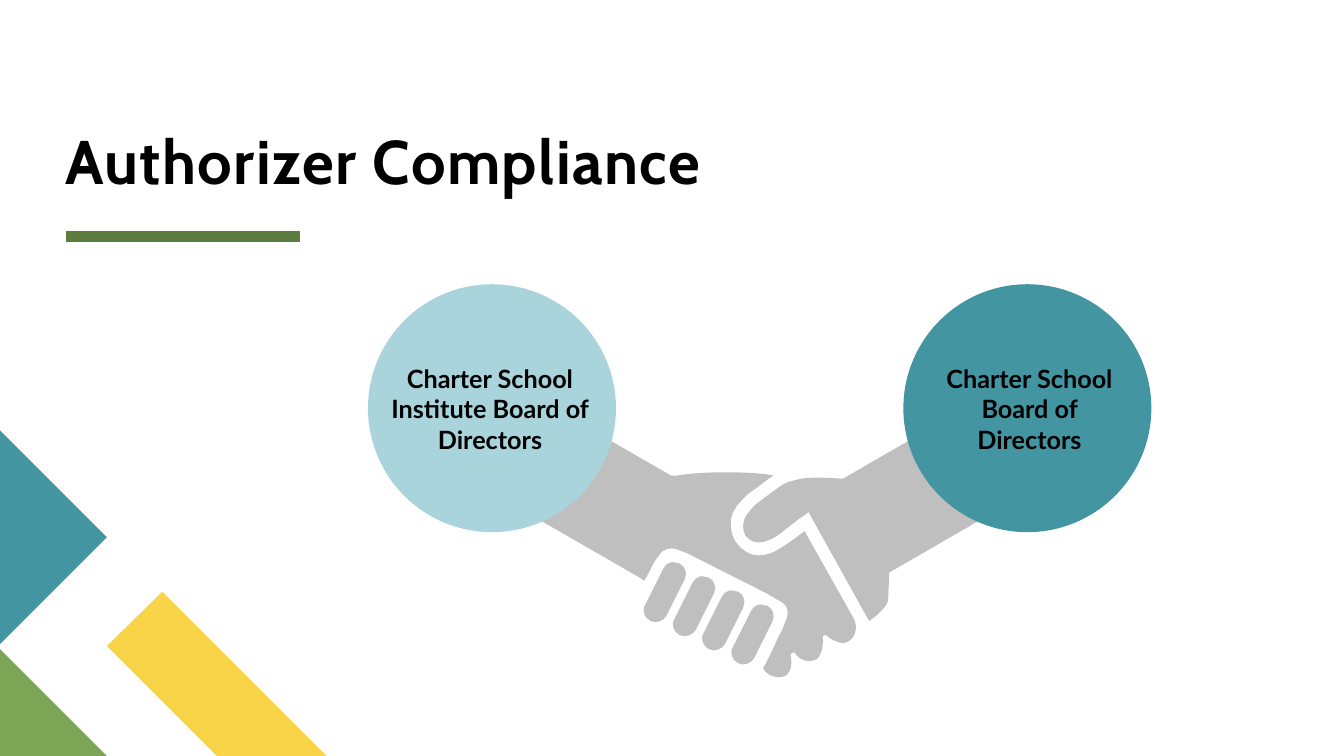
from pptx import Presentation
from pptx.dml.color import RGBColor
from pptx.enum.shapes import MSO_CONNECTOR as CONN, MSO_SHAPE as SHAPE
from pptx.enum.text import MSO_ANCHOR as ANCHOR, MSO_AUTO_SIZE as AUTO, PP_ALIGN as ALIGN
from pptx.oxml.ns import qn
from pptx.util import Inches, Pt
from lxml import etree

TEAL, PALE, GREEN, YELLOW = "4495A2", "A9D4DB", "7CA655", "F9D448"
RULE, GREY, BLACK = "5D7D40", "BFBFBF", "000000"

# Outlines in inches: pairs are corners, six numbers are a Bézier curve
LEFT_HAND = [
    (4, 4.38), (6.31, 5.71), (6.39, 5.76),
    (6.42, 5.71, 6.45, 5.66, 6.47, 5.61), (6.5, 5.56, 6.53, 5.51, 6.57, 5.47),
    (6.6, 5.45, 6.63, 5.44, 6.66, 5.44), (6.69, 5.44, 6.72, 5.45, 6.74, 5.46),
    (6.77, 5.47, 6.79, 5.48, 6.82, 5.49), (7.61, 5.89),
    (7.64, 5.91, 7.68, 5.93, 7.71, 5.95), (7.76, 5.97, 7.8, 6, 7.81, 6.05),
    (7.82, 6.1, 7.8, 6.15, 7.78, 6.19), (7.77, 6.23, 7.75, 6.27, 7.73, 6.3),
    (7.68, 6.41, 7.63, 6.52, 7.57, 6.63), (7.61, 6.71, 7.72, 6.74, 7.8, 6.7),
    (7.85, 6.66, 7.86, 6.57, 7.84, 6.49), (7.88, 6.47),
    (7.92, 6.55, 8.02, 6.58, 8.1, 6.54), (8.15, 6.5, 8.17, 6.4, 8.16, 6.31),
    (8.19, 6.3), (8.25, 6.35, 8.35, 6.4, 8.4, 6.37),
    (8.49, 6.33, 8.51, 6.22, 8.47, 6.14), (7.98, 5.27),
    (7.9, 5.33, 7.81, 5.4, 7.72, 5.45), (7.68, 5.48, 7.6, 5.51, 7.53, 5.51),
    (7.47, 5.51, 7.42, 5.49, 7.38, 5.46), (7.29, 5.4, 7.24, 5.29, 7.25, 5.18),
    (7.25, 5.12, 7.27, 5.08, 7.29, 5.05), (7.31, 5.01, 7.34, 4.98, 7.37, 4.95),
    (7.41, 4.9, 7.46, 4.87, 7.52, 4.83), (7.57, 4.79, 7.62, 4.75, 7.67, 4.72),
    (7.61, 4.69, 7.05, 4.66, 6.7, 4.72), (6.68, 4.72, 6.67, 4.72, 6.66, 4.72),
    (6.07, 4.38)]
RIGHT_HAND = [
    (9, 4.38), (8.36, 4.75),
    (8.22, 4.74, 8.06, 4.73, 7.94, 4.75), (7.9, 4.76, 7.86, 4.77, 7.82, 4.78),
    (7.77, 4.8, 7.73, 4.83, 7.69, 4.86), (7.62, 4.91, 7.55, 4.96, 7.49, 5.01),
    (7.46, 5.04, 7.44, 5.06, 7.42, 5.09), (7.4, 5.11, 7.39, 5.14, 7.38, 5.16),
    (7.36, 5.23, 7.37, 5.31, 7.43, 5.35), (7.48, 5.39, 7.55, 5.39, 7.62, 5.36),
    (7.71, 5.33, 7.79, 5.25, 7.87, 5.19), (7.92, 5.15, 7.97, 5.12, 8.02, 5.08),
    (8.62, 6.16), (8.67, 6.13, 8.81, 6.02, 8.81, 5.94),
    (8.81, 5.86, 8.82, 5.77, 8.82, 5.68), (11.07, 4.38)]
FINGER = [
    (6.69, 5.58), (6.68, 5.57, 6.66, 5.58, 6.65, 5.58),
    (6.62, 5.59, 6.59, 5.61, 6.58, 5.64), (6.4, 6),
    (6.38, 6.03, 6.38, 6.06, 6.39, 6.09), (6.4, 6.12, 6.42, 6.14, 6.45, 6.16),
    (6.51, 6.19, 6.58, 6.16, 6.61, 6.11), (6.79, 5.75),
    (6.82, 5.69, 6.8, 5.62, 6.74, 5.59), (6.72, 5.58, 6.71, 5.58, 6.69, 5.58)]


def rgb(code):
    return RGBColor.from_string(code)


def shift(outline, dx, dy):
    return [tuple(v + (dy if i % 2 else dx) for i, v in enumerate(seg)) for seg in outline]


class Deck:
    title_font, body_font = "Cabin", "Lato"

    def __init__(self):
        self.prs = Presentation()
        self.prs.slide_width, self.prs.slide_height = Inches(13.33), Inches(7.5)
        self.s = self.prs.slides.add_slide(self.prs.slide_layouts[5])

    def style(self, p, font, size, align):
        p.alignment = align
        p.font.name, p.font.size, p.font.bold = font, Pt(size), True
        p.font.color.rgb = rgb(BLACK)

    def paint(self, sp, color):
        sp.shadow.inherit = False
        sp.fill.solid()
        sp.fill.fore_color.rgb = rgb(color)
        sp.line.fill.background()

    def frame(self, sp, anchor, inset_x, inset_y, auto):
        tf = sp.text_frame
        tf.word_wrap, tf.vertical_anchor, tf.auto_size = True, anchor, auto
        tf.margin_left = tf.margin_right = Inches(inset_x)
        tf.margin_top = tf.margin_bottom = Inches(inset_y)
        return tf

    def title(self, text, *box):
        sp = self.s.shapes.title
        sp.left, sp.top, sp.width, sp.height = map(Inches, box)
        p = self.frame(sp, ANCHOR.BOTTOM, 0, 0, AUTO.NONE).paragraphs[0]
        p.line_spacing = 0.8
        self.style(p, self.title_font, 44, ALIGN.LEFT)
        r = p.add_run()
        r.text = text
        r._r.get_or_add_rPr().set("spc", "100")

    def rule(self, x1, x2, y, color, width):
        ln = self.s.shapes.add_connector(CONN.STRAIGHT, *map(Inches, (x1, y, x2, y)))
        ln.line.color.rgb, ln.line.width = rgb(color), Pt(width)
        etree.SubElement(ln._element.spPr, qn("a:effectLst"))

    def outline(self, color, *contours):
        fb = self.s.shapes.build_freeform(*map(Inches, contours[0][0]))
        for i, contour in enumerate(contours):
            ends = [tuple(map(Inches, seg[-2:])) for seg in contour]
            if i:
                fb.move_to(*ends[0])
            fb.add_line_segments(ends[1:])
        sp = fb.convert_to_shape()
        self.paint(sp, color)

        # Bend the curved segments by adding their two control points
        segments = [seg for contour in contours for seg in contour[1:]]
        for seg, el in zip(segments, list(sp._element.iter(qn("a:lnTo")))):
            if len(seg) == 6:
                el.tag = qn("a:cubicBezTo")
                for k in (0, 1):
                    x, y = Inches(seg[2 * k]) - sp.left, Inches(seg[2 * k + 1]) - sp.top
                    el.insert(k, etree.Element(qn("a:pt"), x=str(x), y=str(y)))

    def circle(self, x, y, size, color):
        sp = self.s.shapes.add_shape(SHAPE.OVAL, *map(Inches, (x, y, size, size)))
        self.paint(sp, color)

    def label(self, text, *box):
        sp = self.s.shapes.add_textbox(*map(Inches, box))
        p = self.frame(sp, ANCHOR.MIDDLE, 0.04, 0.02, AUTO.SHAPE_TO_FIT_TEXT).paragraphs[0]
        p.text = text
        self.style(p, self.body_font, 18, ALIGN.CENTER)


def main():
    deck = Deck()

    # Heading
    deck.rule(0.65, 2.98, 2.35, RULE, 8)
    deck.title("Authorizer Compliance", 0.65, 0.11, 11.89, 1.84)

    # Corner decoration
    deck.outline(YELLOW, [(3.24, 7.5), (2.15, 7.5), (1.06, 6.41), (1.61, 5.87)])
    deck.outline(GREEN, [(1.06, 7.5), (0, 7.5), (0, 6.44)])
    deck.outline(TEAL, [(0, 4.27), (1.06, 5.33), (0, 6.39)])

    # Handshake with four evenly stepped fingers
    fingers = [shift(FINGER, 0.29 * i, 0.14 * i) for i in range(4)]
    deck.outline(GREY, LEFT_HAND, RIGHT_HAND, *fingers)

    # The two boards
    deck.circle(3.65, 2.82, 2.46, PALE)
    deck.circle(8.96, 2.82, 2.46, TEAL)
    deck.label("Charter School Institute Board of Directors", 3.63, 3.58, 2.46, 0.95)
    deck.label("Charter School Board of Directors", 9.2, 3.58, 2.02, 0.95)

    deck.prs.save("out.pptx")


if __name__ == "__main__":
    main()
